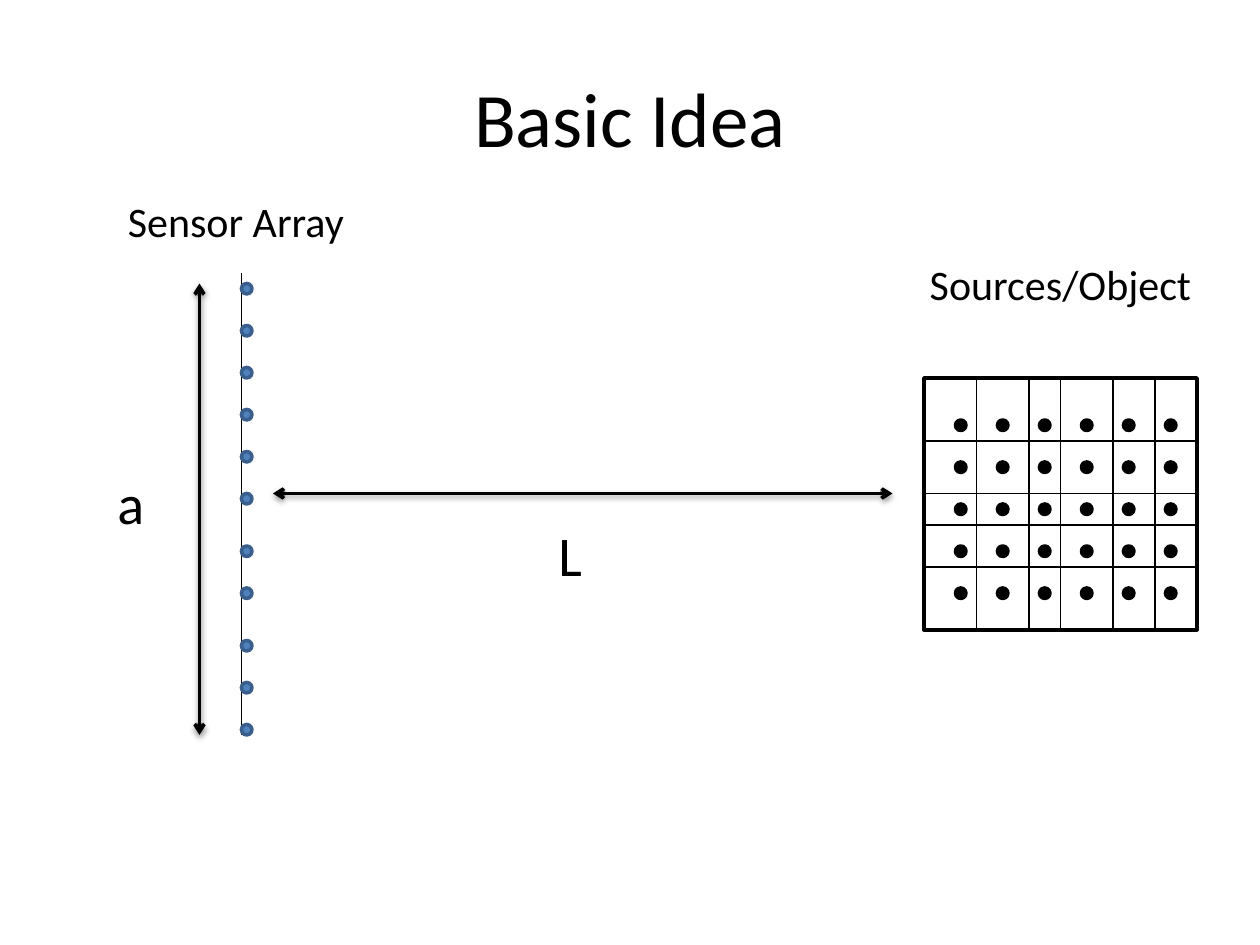
from dataclasses import dataclass

from lxml import etree
from pptx import Presentation
from pptx.dml.color import RGBColor
from pptx.enum.shapes import MSO_CONNECTOR, MSO_SHAPE
from pptx.enum.text import MSO_ANCHOR, MSO_AUTO_SIZE, PP_ALIGN
from pptx.oxml import parse_xml
from pptx.oxml.ns import nsdecls, qn
from pptx.util import Pt

STRAIGHT = MSO_CONNECTOR.STRAIGHT
OVAL, RECTANGLE = MSO_SHAPE.OVAL, MSO_SHAPE.RECTANGLE
LEFT, CENTER = PP_ALIGN.LEFT, PP_ALIGN.CENTER
TOP, MIDDLE = MSO_ANCHOR.TOP, MSO_ANCHOR.MIDDLE
FIT_SHAPE = MSO_AUTO_SIZE.SHAPE_TO_FIT_TEXT
BLANK_LAYOUT = 6


@dataclass(frozen=True)
class Theme:
    font: str = "Calibri"
    black: str = "000000"
    white: str = "FFFFFF"
    sensor: str = "4F81BD"
    sensor_edge: str = "3A5F8C"
    title_size: float = 44
    symbol_size: float = 32
    label_size: float = 24
    thin: float = 0.75
    thick: float = 2


THEME = Theme()

# Lengths in points
DOT = 6
SENSOR_X = 138
SENSOR_TOPS = [*range(162, 283, 24), 312, 336, *range(366, 415, 24)]
GRID_LEFT, GRID_TOP, GRID_RIGHT, GRID_BOTTOM = 528, 216, 684, 360
GRID_COLUMNS = (558, 588, 606, 636, 660)
GRID_ROWS = (252, 282, 300, 324)
SOURCE_LEFTS = range(546, 667, 24)
SOURCE_TOPS = range(240, 337, 24)

SHADOW_XML = (
    f'<a:effectLst {nsdecls("a")}>'
    '<a:outerShdw blurRad="40000" dist="20000" dir="5400000" rotWithShape="0">'
    f'<a:srgbClr val="{THEME.black}"><a:alpha val="38000"/></a:srgbClr>'
    "</a:outerShdw></a:effectLst>"
)


def add_text(page, text, left, top, width, height, *, size,
             align=LEFT, anchor=TOP, fit=FIT_SHAPE):
    box = page.shapes.add_textbox(Pt(left), Pt(top), Pt(width), Pt(height))
    frame = box.text_frame
    frame.word_wrap = True
    frame.auto_size = fit
    frame.vertical_anchor = anchor
    para = frame.paragraphs[0]
    para.alignment = align
    span = para.add_run()
    span.text = text
    span.font.name = THEME.font
    span.font.size = Pt(size)
    span.font.color.rgb = RGBColor.from_string(THEME.black)


def add_shape(group, kind, left, top, width, height, fill, edge):
    shape = group.shapes.add_shape(kind, Pt(left), Pt(top), Pt(width), Pt(height))
    shape.shadow.inherit = False
    shape.fill.solid()
    shape.fill.fore_color.rgb = RGBColor.from_string(fill)
    shape.line.color.rgb = RGBColor.from_string(edge)
    shape.line.width = Pt(THEME.thick)


def add_dot(group, left, top, fill, edge):
    add_shape(group, OVAL, left, top, DOT, DOT, fill, edge)


def add_line(parent, x1, y1, x2, y2, width=THEME.thin):
    """Add a black line without a shadow and return it."""
    line = parent.shapes.add_connector(STRAIGHT, Pt(x1), Pt(y1), Pt(x2), Pt(y2))
    line.line.color.rgb = RGBColor.from_string(THEME.black)
    line.line.width = Pt(width)
    etree.SubElement(line._element.spPr, qn("a:effectLst"))
    return line


def add_double_arrow(page, x1, y1, x2, y2):
    """Add a shadowed line with an arrowhead at both ends."""
    arrow = add_line(page, x1, y1, x2, y2, THEME.thick)
    properties = arrow._element.spPr
    outline = properties.find(qn("a:ln"))
    for end in ("a:headEnd", "a:tailEnd"):
        etree.SubElement(outline, qn(end), type="arrow")
    properties.replace(properties.find(qn("a:effectLst")), parse_xml(SHADOW_XML))


def add_sensor_array(page):
    group = page.shapes.add_group_shape()
    add_line(group, SENSOR_X, 156, SENSOR_X, 420)
    for top in SENSOR_TOPS:
        add_dot(group, SENSOR_X, top, THEME.sensor, THEME.sensor_edge)


def add_source_grid(page):
    group = page.shapes.add_group_shape()
    add_shape(group, RECTANGLE, GRID_LEFT, GRID_TOP, GRID_RIGHT - GRID_LEFT,
              GRID_BOTTOM - GRID_TOP, THEME.white, THEME.black)
    for top in SOURCE_TOPS:
        for left in SOURCE_LEFTS:
            add_dot(group, left, top, THEME.black, THEME.black)
    for x in GRID_COLUMNS:
        add_line(group, x, GRID_TOP, x, GRID_BOTTOM)
    for y in GRID_ROWS:
        add_line(group, GRID_LEFT, y, GRID_RIGHT, y)


def main():
    deck = Presentation()
    deck.slide_width, deck.slide_height = Pt(720), Pt(540)
    page = deck.slides.add_slide(deck.slide_layouts[BLANK_LAYOUT])

    # Title
    add_text(page, "Basic Idea", 36, 21.6, 648, 90, size=THEME.title_size,
             align=CENTER, anchor=MIDDLE, fit=MSO_AUTO_SIZE.NONE)

    # Sensors and sources
    add_sensor_array(page)
    add_source_grid(page)

    # Distance and aperture
    add_double_arrow(page, 156, 282, 510, 282)
    add_text(page, "L", 312, 294, 36, 46, size=THEME.symbol_size)
    add_double_arrow(page, 114, 162, 114, 420)
    add_text(page, "a", 60, 264, 18, 46, size=THEME.symbol_size)

    # Labels
    add_text(page, "Sensor Array", 66, 108, 150, 36, size=THEME.label_size)
    add_text(page, "Sources/Object", 516, 144, 180, 36,
             size=THEME.label_size, align=CENTER)

    deck.save("out.pptx")


if __name__ == "__main__":
    main()
